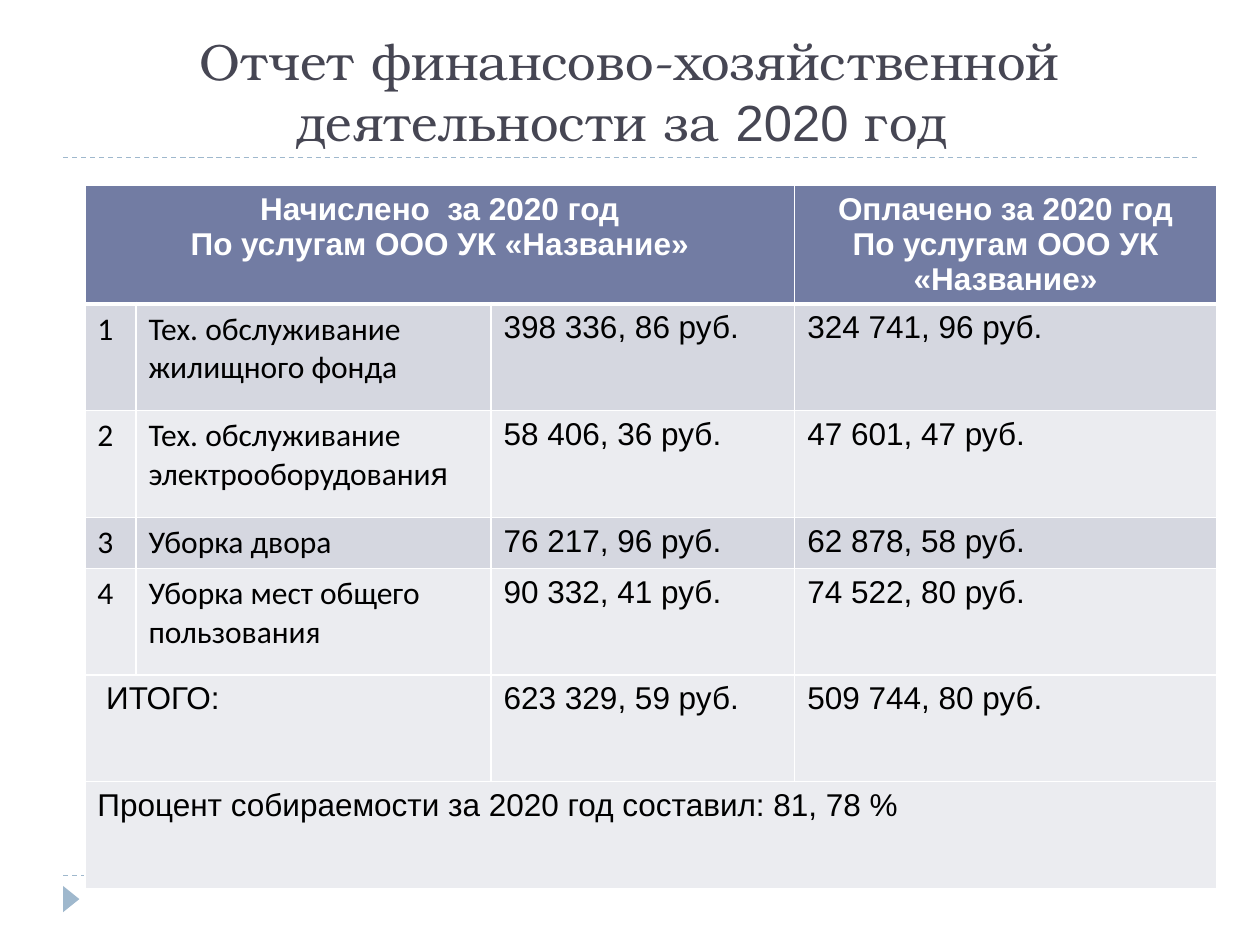
from lxml.etree import SubElement
from pptx import Presentation
from pptx.dml.color import RGBColor
from pptx.enum.dml import MSO_LINE
from pptx.enum.shapes import MSO_CONNECTOR as Connector, MSO_SHAPE as Shape
from pptx.enum.text import MSO_ANCHOR as Anchor, MSO_AUTO_SIZE as AutoSize, PP_ALIGN as Align
from pptx.oxml.ns import qn
from pptx.util import Cm, Pt

ACCENT, TITLE_COLOUR = "9FB8CD", "464653"
HEADER_FILL, DARK_BAND, LIGHT_BAND = "727CA3", "D5D7E0", "EBECF0"
BLACK, WHITE = "000000", "FFFFFF"
SANS, SERIF, LABEL = "Arial", "TeX Gyre Bonum", "Calibri"

COLUMN_WIDTHS = (1.03, 7.16, 6.12, 8.5)
ROW_HEIGHTS = (1.49, 2.15, 2.15, 0.94, 2.15, 2.15, 2.15)
BAND_FILLS = (HEADER_FILL, DARK_BAND, LIGHT_BAND, DARK_BAND, LIGHT_BAND, LIGHT_BAND, LIGHT_BAND)
MERGES = (((0, 0), (0, 2)), ((5, 0), (5, 1)), ((6, 0), (6, 3)))

COMPANY = "По услугам ООО УК «Название»"
HEADERS = {0: "Начислено  за 2020 год", 3: "Оплачено за 2020 год"}
SERVICES = (
    ([("Тех. обслуживание жилищного фонда", LABEL)], "398 336, 86 руб.", "324 741, 96 руб."),
    ([("Тех. обслуживание электрооборудовани", LABEL), ("я", SANS)],
     "58 406, 36 руб.", "47 601, 47 руб."),
    ([("Уборка двора", LABEL)], "76 217, 96 руб.", "62 878, 58 руб."),
    ([("Уборка мест общего пользования", LABEL)], "90 332, 41 руб.", "74 522, 80 руб."),
)
TOTALS = {0: " ИТОГО:", 2: "623 329, 59 руб.", 3: "509 744, 80 руб."}
COLLECTION_RATE = "Процент собираемости за 2020 год составил: 81, 78 %"


def rgb(colour):
    return RGBColor.from_string(colour)


def add_runs(paragraph, pieces, colour, **font_format):
    """Add (text, font name) pieces that share one colour and format."""
    for text, font_name in pieces:
        run = paragraph.add_run()
        run.text = text
        run.font.color.rgb = rgb(colour)
        for attribute, value in {"name": font_name, **font_format}.items():
            setattr(run.font, attribute, value)


def fill_title(title):
    place = {"left": Cm(1.27), "top": Cm(0.64), "width": Cm(22.86), "height": Cm(2.54)}
    for attribute, value in place.items():
        setattr(title, attribute, value)
    frame = title.text_frame
    frame_format = {"word_wrap": True, "auto_size": AutoSize.NONE,
                    "vertical_anchor": Anchor.BOTTOM}
    for attribute, value in frame_format.items():
        setattr(frame, attribute, value)
    heading = frame.paragraphs[0]
    heading.alignment = Align.CENTER
    pieces = [("Отчет финансово-хозяйственной деятельности за ", SERIF),
              ("2020", SANS), (" год ", SERIF)]
    add_runs(heading, pieces, TITLE_COLOUR, size=Pt(29))


def add_dashed_rule(slide, y):
    rule = slide.shapes.add_connector(Connector.STRAIGHT, Cm(1.27), Cm(y), Cm(24.13), Cm(y))
    rule.line.color.rgb = rgb(ACCENT)
    rule.line.width = Pt(0.75)
    rule.line.dash_style = MSO_LINE.DASH
    SubElement(rule._element.spPr, qn("a:effectLst"))


def add_corner_marker(slide):
    marker = slide.shapes.add_shape(Shape.ISOSCELES_TRIANGLE,
                                    Cm(1.17), Cm(17.96), Cm(0.53), Cm(0.33))
    marker.rotation = 90
    marker.shadow.inherit = False
    marker.fill.solid()
    marker.fill.fore_color.rgb = rgb(ACCENT)
    marker.line.fill.background()


def style_cell(cell, colour, top, bottom):
    """Fill a cell and give it white borders; top and bottom are widths in points."""
    properties = cell._tc.get_or_add_tcPr()
    for side, width in {"L": 1, "R": 1, "T": top, "B": bottom}.items():
        border = SubElement(properties, qn(f"a:ln{side}"), w=str(Pt(width)))
        solid = SubElement(border, qn("a:solidFill"))
        SubElement(solid, qn("a:srgbClr"), val=WHITE)
    cell.fill.solid()
    cell.fill.fore_color.rgb = rgb(colour)


def write_cell(cell, pieces):
    add_runs(cell.text_frame.paragraphs[0], pieces, BLACK, size=Pt(18), bold=False)


def write_header(cell, heading):
    frame = cell.text_frame
    for paragraph, text in ((frame.paragraphs[0], heading), (frame.add_paragraph(), COMPANY)):
        paragraph.alignment = Align.CENTER
        add_runs(paragraph, [(text, SANS)], WHITE, size=Pt(18), bold=True)


def add_report_grid(slide):
    """Add the sized, merged and coloured table without its text."""
    table = slide.shapes.add_table(
        len(ROW_HEIGHTS), len(COLUMN_WIDTHS), Cm(1.71), Cm(3.74),
        Cm(sum(COLUMN_WIDTHS)), Cm(sum(ROW_HEIGHTS))).table
    for column, width in zip(table.columns, COLUMN_WIDTHS):
        column.width = Cm(width)
    for index, (row, height, colour) in enumerate(zip(table.rows, ROW_HEIGHTS, BAND_FILLS)):
        row.height = Cm(height)
        for cell in row.cells:
            style_cell(cell, colour, top=3 if index == 1 else 1, bottom=3 if index == 0 else 1)
    for first, last in MERGES:
        table.cell(*first).merge(table.cell(*last))
    return table


def fill_report(table):
    for column, heading in HEADERS.items():
        write_header(table.cell(0, column), heading)
    for number, (service, charged, paid) in enumerate(SERVICES, start=1):
        contents = ([(str(number), LABEL)], service, [(charged, SANS)], [(paid, SANS)])
        for column, pieces in enumerate(contents):
            write_cell(table.cell(number, column), pieces)
    for column, text in TOTALS.items():
        write_cell(table.cell(5, column), [(text, SANS)])
    write_cell(table.cell(6, 0), [(COLLECTION_RATE, SANS)])


def main():
    deck = Presentation()
    deck.slide_width, deck.slide_height = Cm(25.4), Cm(19.05)
    slide = deck.slides.add_slide(deck.slide_layouts[5])
    for y in (17.65, 3.18):
        add_dashed_rule(slide, y)
    add_corner_marker(slide)
    fill_title(slide.shapes.title)
    fill_report(add_report_grid(slide))
    deck.save("out.pptx")


if __name__ == "__main__":
    main()
